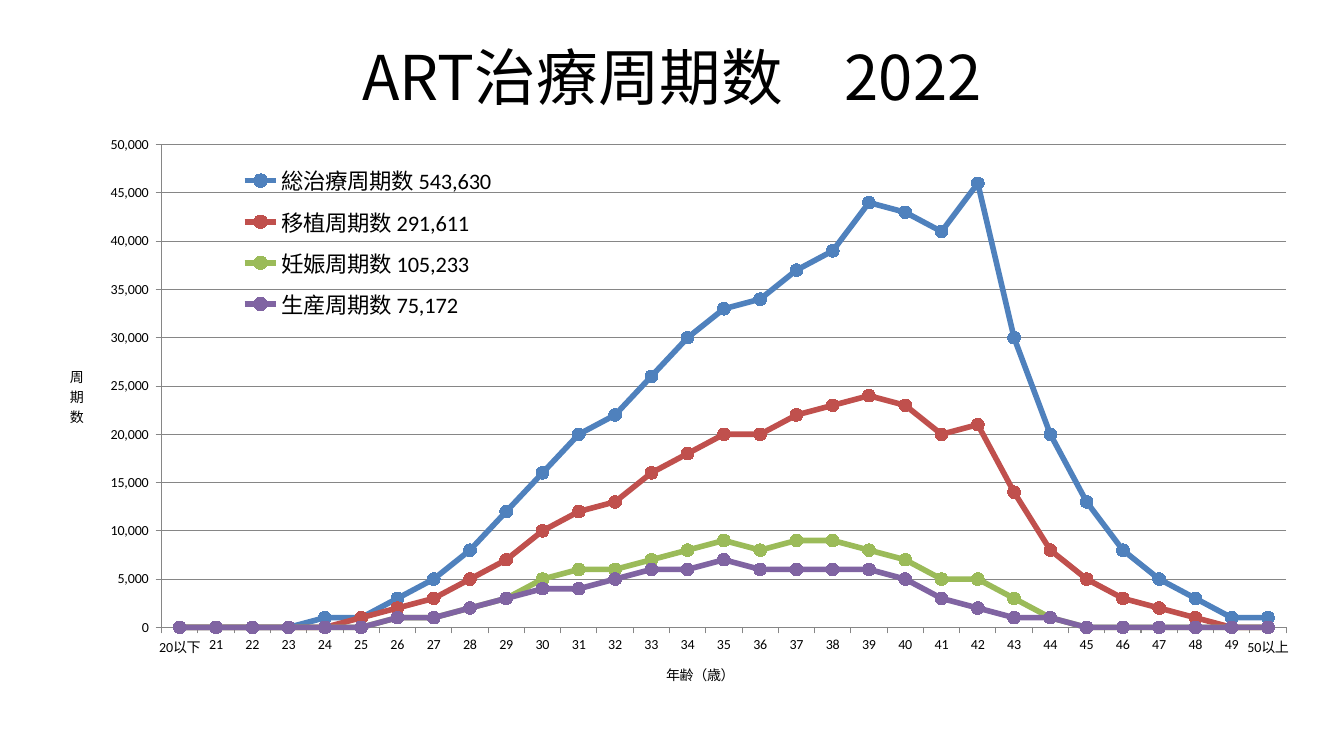
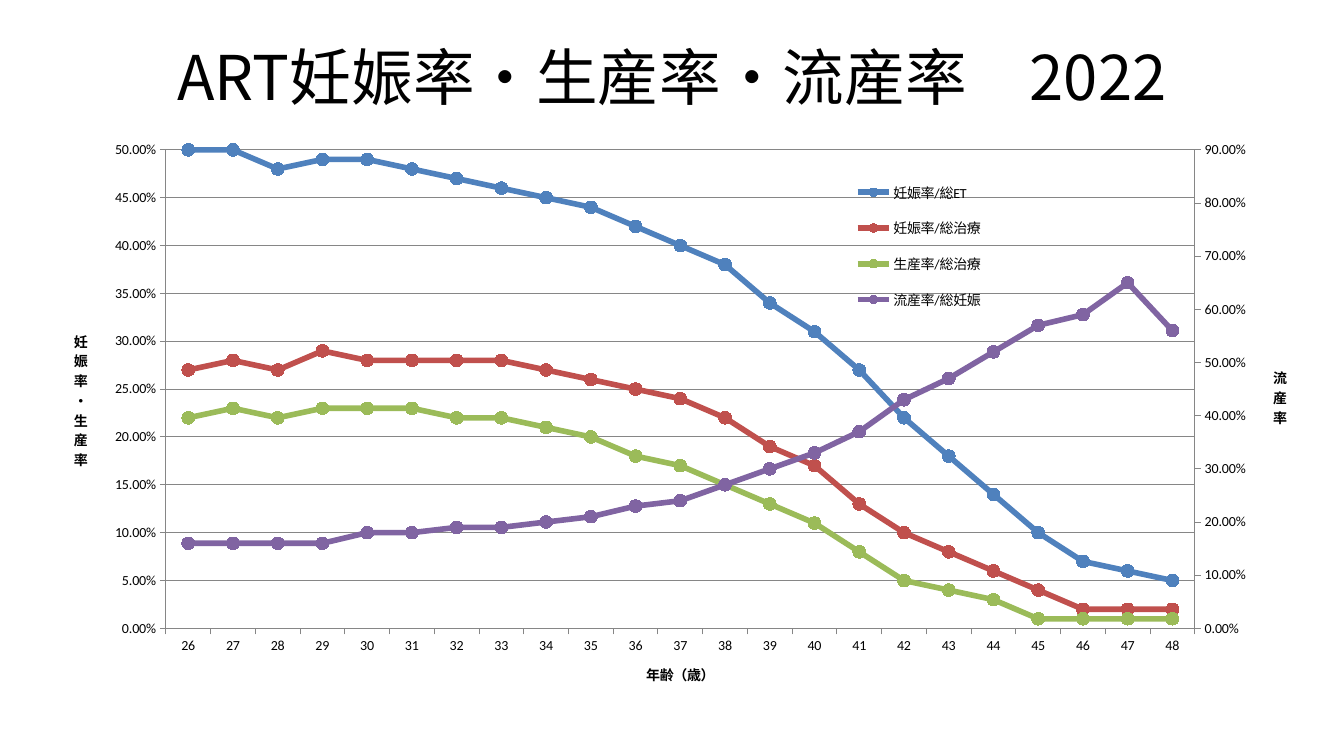
from copy import deepcopy

from lxml import etree
from pptx import Presentation
from pptx.chart.axis import CategoryAxis, ValueAxis
from pptx.chart.data import CategoryChartData
from pptx.dml.color import RGBColor
from pptx.enum.chart import XL_CHART_TYPE, XL_LEGEND_POSITION, XL_MARKER_STYLE, XL_TICK_MARK
from pptx.enum.text import MSO_ANCHOR, PP_ALIGN
from pptx.oxml.ns import qn
from pptx.util import Pt

PX = 9525
LINE_MARKERS = XL_CHART_TYPE.LINE_MARKERS
CIRCLE = XL_MARKER_STYLE.CIRCLE
TICK_OUT = XL_TICK_MARK.OUTSIDE
TICK_NONE = XL_TICK_MARK.NONE
LEGEND_RIGHT = XL_LEGEND_POSITION.RIGHT

COLORS = {
    "text": "000000",
    "grid": "868686",
    "blue": "4F81BD",
    "red": "C0504D",
    "green": "9BBB59",
    "purple": "8064A2",
}
SERIES_COLORS = ["blue", "red", "green", "purple"]
TITLE_FONT = "Noto Sans CJK JP"
CHART_FONT = "Calibri"
AGE_TITLE = "年齢（歳）"

CYCLE_AGES = ["20以下", *map(str, range(21, 50)), "50以上"]
CYCLES_THOUSANDS = {
    "総治療周期数 543,630": [
        0, 0, 0, 0, 1, 1, 3, 5, 8, 12, 16, 20, 22, 26, 30, 33, 34, 37, 39, 44, 43, 41,
        46, 30, 20, 13, 8, 5, 3, 1, 1],
    "移植周期数 291,611": [
        0, 0, 0, 0, 0, 1, 2, 3, 5, 7, 10, 12, 13, 16, 18, 20, 20, 22, 23, 24, 23, 20,
        21, 14, 8, 5, 3, 2, 1, 0, 0],
    "妊娠周期数 105,233": [
        0, 0, 0, 0, 0, 0, 1, 1, 2, 3, 5, 6, 6, 7, 8, 9, 8, 9, 9, 8, 7, 5, 5, 3, 1,
        0, 0, 0, 0, 0, 0],
    "生産周期数 75,172": [
        0, 0, 0, 0, 0, 0, 1, 1, 2, 3, 4, 4, 5, 6, 6, 7, 6, 6, 6, 6, 5, 3, 2, 1, 1,
        0, 0, 0, 0, 0, 0],
}

RATE_AGES = list(map(str, range(26, 49)))
RATES_PERCENT = {
    "妊娠率/総ET": [
        50, 50, 48, 49, 49, 48, 47, 46, 45, 44, 42, 40, 38, 34, 31, 27, 22, 18, 14, 10,
        7, 6, 5],
    "妊娠率/総治療": [
        27, 28, 27, 29, 28, 28, 28, 28, 27, 26, 25, 24, 22, 19, 17, 13, 10, 8, 6, 4,
        2, 2, 2],
    "生産率/総治療": [
        22, 23, 22, 23, 23, 23, 22, 22, 21, 20, 18, 17, 15, 13, 11, 8, 5, 4, 3, 1,
        1, 1, 1],
    "流産率/総妊娠": [
        16, 16, 16, 16, 18, 18, 19, 19, 20, 21, 23, 24, 27, 30, 33, 37, 43, 47, 52, 57,
        59, 65, 56],
}
CHART_BOX = (42, 125, 1194, 531)


def rgb(name):
    return RGBColor.from_string(COLORS[name])


def px(*lengths):
    return [n * PX for n in lengths]


def add_titled_slide(prs, title):
    slide = prs.slides.add_slide(prs.slide_layouts[5])
    sp = slide.shapes.title
    sp.left, sp.top, sp.width, sp.height = px(64, 29, 1152, 87)
    tf = sp.text_frame
    tf.text = title
    tf.vertical_anchor = MSO_ANCHOR.MIDDLE
    p = tf.paragraphs[0]
    p.alignment = PP_ALIGN.CENTER
    p.font.size = Pt(44)
    p.font.name = TITLE_FONT
    p.font.color.rgb = rgb("text")
    rpr = p._p.pPr.find(qn("a:defRPr"))
    etree.SubElement(rpr, qn("a:ea"), typeface=TITLE_FONT)
    return slide


def place(element, *box):
    """Put a chart part at x, y and optionally w, h, in px from the chart's corner."""
    old = element.find(qn("c:layout"))
    if old is not None:
        element.remove(old)
    layout = etree.Element(qn("c:layout"))
    manual = etree.SubElement(layout, qn("c:manualLayout"))
    settings = [("xMode", "edge"), ("yMode", "edge")]
    if element.tag == qn("c:plotArea"):
        settings.insert(0, ("layoutTarget", "inner"))
    chart_size = CHART_BOX[2:] * 2
    settings += [(tag, n / full) for tag, n, full in zip("xywh", box, chart_size)]
    for tag, value in settings:
        etree.SubElement(manual, qn(f"c:{tag}"), val=str(value))
    overlay = element.find(qn("c:overlay"))
    if overlay is None:
        element.insert(0, layout)
    else:
        overlay.addprevious(layout)


def style_axis(axis, title, at, bold, stacked=False):
    axis.major_tick_mark = TICK_OUT
    axis.minor_tick_mark = TICK_NONE
    axis.format.line.color.rgb = rgb("grid")
    axis.format.line.width = Pt(0.75)
    tf = axis.axis_title.text_frame
    tf.text = title
    font = tf.paragraphs[0].font
    font.size = Pt(10)
    font.bold = bold
    font.color.rgb = rgb("text")
    if stacked:
        body = tf._txBody.find(qn("a:bodyPr"))
        body.set("rot", "0")
        body.set("vert", "wordArtVertRtl")
    place(axis._element.find(qn("c:title")), *at)


def style_value_axis(axis, title, at, bold, top, step, number_format, grid=True):
    style_axis(axis, title, at, bold, stacked=True)
    axis.minimum_scale, axis.maximum_scale, axis.major_unit = 0, top, step
    axis.tick_labels.number_format = number_format
    axis.tick_labels.number_format_is_linked = False
    axis.has_major_gridlines = grid
    if grid:
        line = axis.major_gridlines.format.line
        line.color.rgb = rgb("grid")
        line.width = Pt(0.75)


def cross_at_max(axis_element):
    old = axis_element.find(qn("c:crosses"))
    if old is not None:
        axis_element.remove(old)
    crosses = etree.Element(qn("c:crosses"), val="max")
    axis_element.find(qn("c:crossAx")).addnext(crosses)


def move_last_series_right(chart):
    """Plot the last series on a second value axis; return the left and right axes."""
    left_axis = chart.value_axis
    left = chart.plots[0]._element
    cat, val = chart.category_axis._element, left_axis._element
    right, cat2, val2 = map(deepcopy, (left, cat, val))
    left.remove(left.findall(qn("c:ser"))[-1])
    for ser in right.findall(qn("c:ser"))[:-1]:
        right.remove(ser)
    new_ids = {cat.find(qn("c:axId")).get("val"): "1001",
               val.find(qn("c:axId")).get("val"): "1002"}
    for part in (right, cat2, val2):
        for ref in part.iter(qn("c:axId"), qn("c:crossAx")):
            ref.set("val", new_ids[ref.get("val")])
    left.addnext(right)
    val.addnext(val2)
    val2.addnext(cat2)
    val2.find(qn("c:axPos")).set("val", "r")
    cross_at_max(val2)
    CategoryAxis(cat2).visible = False
    return left_axis, ValueAxis(val2)


def add_line_chart(slide, ages, series, plot, legend, legend_size):
    """Add a marked line chart; plot and legend are boxes in px within the chart."""
    data = CategoryChartData()
    data.categories = ages
    for name, values in series.items():
        data.add_series(name, values)
    chart = slide.shapes.add_chart(LINE_MARKERS, *px(*CHART_BOX), data).chart
    chart.has_title = False
    chart.font.size = Pt(10)
    chart.font.name = CHART_FONT
    chart.font.color.rgb = rgb("text")
    chart.plots[0].vary_by_categories = False
    for ser, color in zip(chart.series, SERIES_COLORS):
        ser.smooth = False
        ser.format.line.color.rgb = rgb(color)
        ser.format.line.width = Pt(4)
        marker = ser.marker
        marker.style = CIRCLE
        marker.size = 9
        marker.format.fill.solid()
        marker.format.fill.fore_color.rgb = rgb(color)
        marker.format.line.color.rgb = rgb(color)
    chart.has_legend = True
    chart.legend.position = LEGEND_RIGHT
    chart.legend.include_in_layout = False
    chart.legend.font.size = Pt(legend_size)
    place(chart.legend._element, *legend)
    place(chart._chartSpace.chart.plotArea, *plot)
    return chart


def add_cycles_slide(prs):
    slide = add_titled_slide(prs, "ART治療周期数　2022")
    cycles = {name: [v * 1000 for v in values]
              for name, values in CYCLES_THOUSANDS.items()}
    chart = add_line_chart(slide, CYCLE_AGES, cycles, plot=(112, 13, 1071, 465),
                           legend=(177, 23, 263, 168), legend_size=16)
    style_axis(chart.category_axis, AGE_TITLE, (590, 510), bold=False)
    style_value_axis(chart.value_axis, "周期数", (22, 223), False,
                     50000, 5000, r"#,##0_);[Red]\(#,##0\)")


def add_rates_slide(prs):
    slide = add_titled_slide(prs, "ART妊娠率・生産率・流産率　2022")
    rates = {name: [v / 100 for v in values] for name, values in RATES_PERCENT.items()}
    chart = add_line_chart(slide, RATE_AGES, rates, plot=(116, 18, 980, 461),
                           legend=(762, 34, 143, 153), legend_size=10)
    left_axis, right_axis = move_last_series_right(chart)
    style_axis(chart.category_axis, AGE_TITLE, (571, 510), bold=True)
    style_value_axis(left_axis, "妊娠率・生産率", (26, 189), True, 0.5, 0.05, "0.00%")
    style_value_axis(right_axis, "流産率", (1168, 224), True,
                     0.9, 0.1, "0.00%", grid=False)


def main():
    prs = Presentation()
    prs.slide_width, prs.slide_height = px(1280, 720)
    add_cycles_slide(prs)
    add_rates_slide(prs)
    prs.save("out.pptx")


if __name__ == "__main__":
    main()
